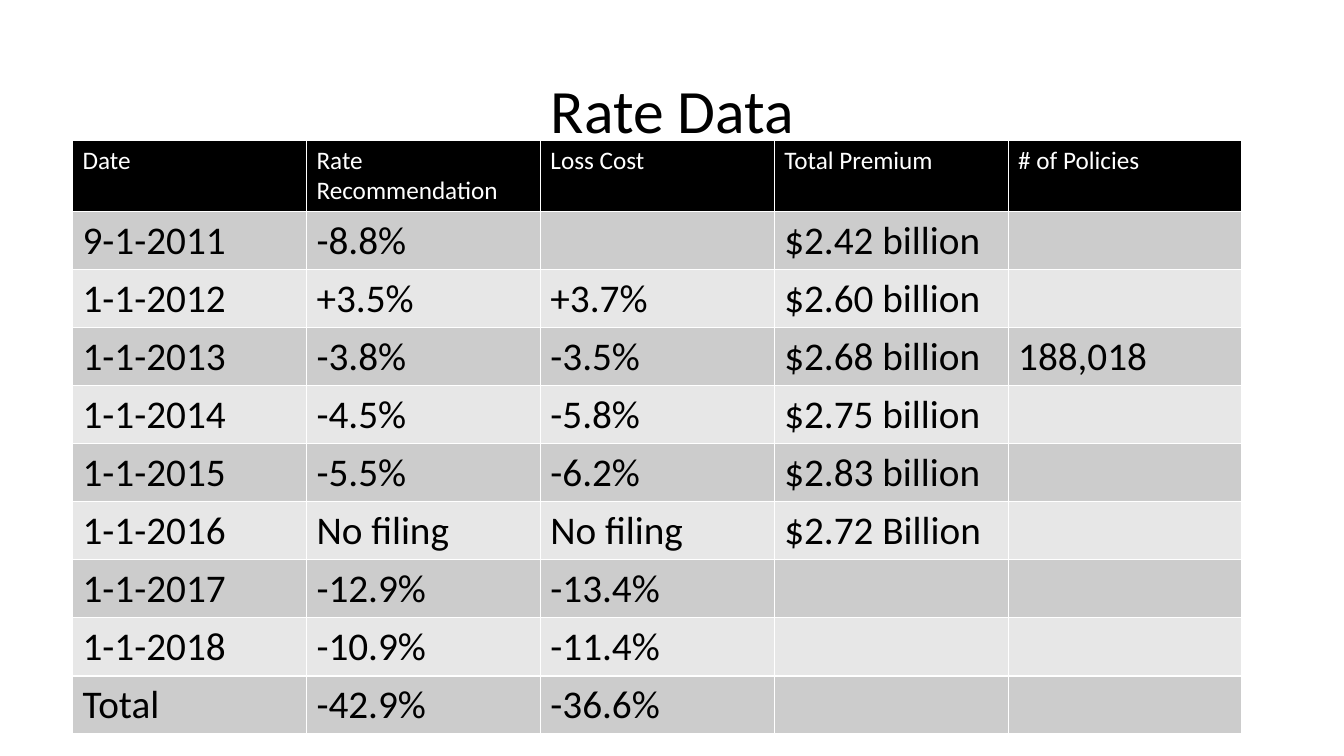
import dataclasses

import pptx
import pptx.dml.color
import pptx.enum.text
import pptx.util

EMU_PER_PX = 9144


@dataclasses.dataclass(frozen=True)
class Theme:
    font: str = "Calibri"
    title_size: int = 44
    header_size: int = 18
    body_size: int = 28
    text: str = "000000"
    header_text: str = "FFFFFF"
    header_fill: str = "000000"
    bands: tuple = ("CCCCCC", "E7E7E7")


class SlideBuilder:
    def __init__(self, presentation, theme):
        self.theme = theme
        self.slide = presentation.slides.add_slide(presentation.slide_layouts[5])

    @staticmethod
    def px(length):
        return pptx.util.Emu(length * EMU_PER_PX)

    def style(self, paragraph, size, color):
        paragraph.font.name = self.theme.font
        paragraph.font.size = pptx.util.Pt(size)
        paragraph.font.bold = False
        paragraph.font.color.rgb = pptx.dml.color.RGBColor.from_string(color)

    def title(self, text, left, top, width, height):
        shape = self.slide.shapes.title
        shape.left, shape.top = self.px(left), self.px(top)
        shape.width, shape.height = self.px(width), self.px(height)
        shape.text_frame.text = text
        shape.text_frame.vertical_anchor = pptx.enum.text.MSO_ANCHOR.MIDDLE
        paragraph = shape.text_frame.paragraphs[0]
        paragraph.alignment = pptx.enum.text.PP_ALIGN.CENTER
        paragraph.line_spacing = 0.9
        self.style(paragraph, self.theme.title_size, self.theme.text)

    def cell(self, cell, text, size, color, fill):
        cell.text = text
        cell.fill.solid()
        cell.fill.fore_color.rgb = pptx.dml.color.RGBColor.from_string(fill)
        self.style(cell.text_frame.paragraphs[0], size, color)

    def table(self, rows, left, top, column_width, header_height, row_height):
        theme = self.theme
        column_count = len(rows[0])
        table = self.slide.shapes.add_table(
            len(rows), column_count, self.px(left), self.px(top),
            self.px(column_width * column_count),
            self.px(header_height + row_height * (len(rows) - 1)),
        ).table
        for column in table.columns:
            column.width = self.px(column_width)
        for row_index, values in enumerate(rows):
            is_header = row_index == 0
            table.rows[row_index].height = self.px(header_height if is_header else row_height)
            if is_header:
                look = theme.header_size, theme.header_text, theme.header_fill
            else:
                look = theme.body_size, theme.text, theme.bands[(row_index - 1) % 2]
            for column_index, text in enumerate(values):
                self.cell(table.cell(row_index, column_index), text, *look)


RATE_ROWS = [
    ("Date", "Rate Recommendation", "Loss Cost", "Total Premium", "# of Policies"),
    ("9-1-2011", "-8.8%", "", "$2.42 billion", ""),
    ("1-1-2012", "+3.5%", "+3.7%", "$2.60 billion", ""),
    ("1-1-2013", "-3.8%", "-3.5%", "$2.68 billion", "188,018"),
    ("1-1-2014", "-4.5%", "-5.8%", "$2.75 billion", ""),
    ("1-1-2015", "-5.5%", "-6.2%", "$2.83 billion", ""),
    ("1-1-2016", "No filing", "No filing", "$2.72 Billion", ""),
    ("1-1-2017", "-12.9%", "-13.4%", "", ""),
    ("1-1-2018", "-10.9%", "-11.4%", "", ""),
    ("Total", "-42.9%", "-36.6%", "", ""),
]


def main():
    presentation = pptx.Presentation()
    presentation.slide_width = SlideBuilder.px(1333)
    presentation.slide_height = SlideBuilder.px(750)
    builder = SlideBuilder(presentation, Theme())
    builder.title("Rate Data", 92, 40, 1150, 145)
    builder.table(RATE_ROWS, 72, 139, column_width=232, header_height=69, row_height=55)
    presentation.save("out.pptx")


if __name__ == "__main__":
    main()
